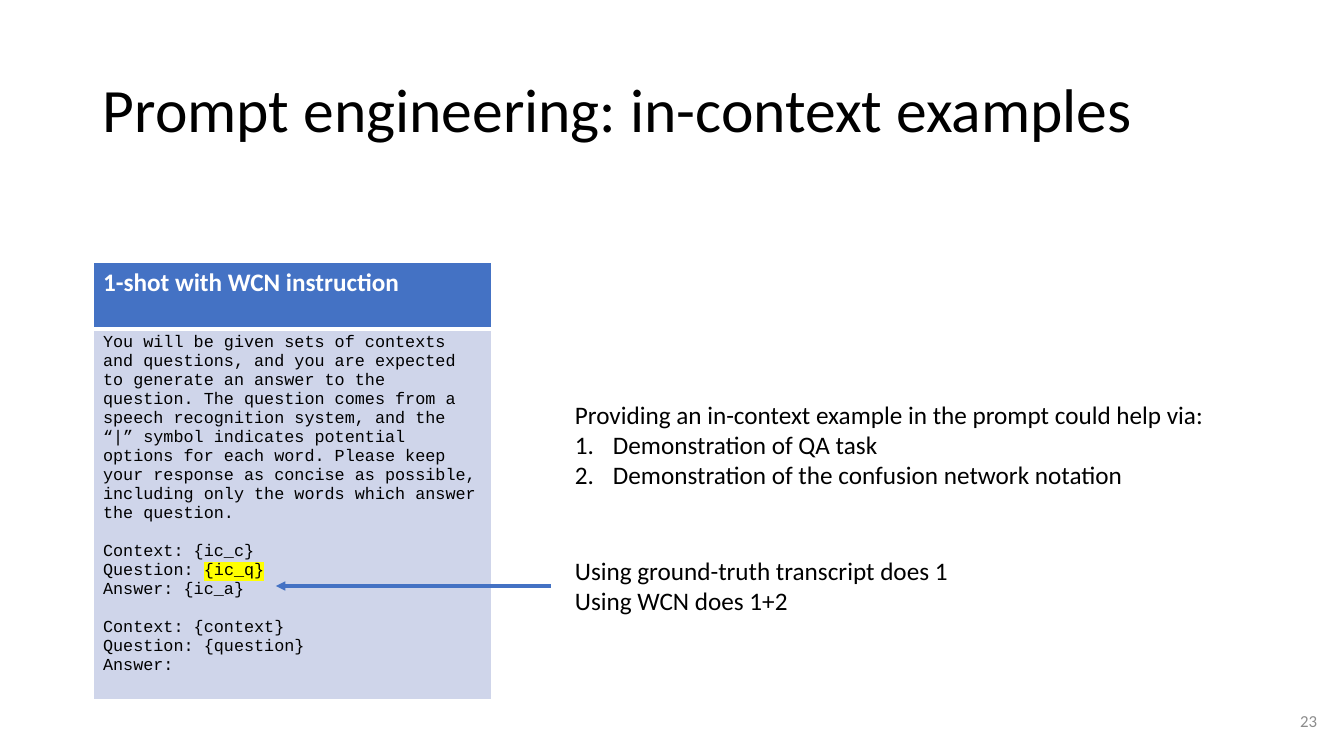
import pptx
import pptx.dml.color
import pptx.enum.shapes
import pptx.enum.text
import pptx.oxml
import pptx.oxml.ns
import pptx.util
import lxml.etree

PX = 914400 / 100.8
THEME = {
    "sans": "Calibri", "mono": "Courier New",
    "black": "000000", "white": "FFFFFF", "grey": "8C8C8C",
    "blue": "4472C4", "pale": "CFD5EA", "yellow": "FFFF00",
    "title": 44, "body": 18, "small": 12,
}
qn = pptx.oxml.ns.qn
ANCHOR = pptx.enum.text.MSO_ANCHOR
rgb = pptx.dml.color.RGBColor.from_string


def px(n):
    return pptx.util.Emu(round(n * PX))


def write(tf, lines, size="body", font="sans", color="black", bold=False, align=None,
          spacing=None, numbered=(), spaced=(), gap=0, mark=None):
    """Fill a text frame, one paragraph per line; numbered and spaced hold line indexes."""
    for i, line in enumerate(lines):
        p = tf.paragraphs[0] if i == 0 else tf.add_paragraph()
        p.alignment, p.line_spacing = align, spacing
        if i in spaced:
            p.space_before = pptx.util.Pt(gap)
        if i in numbered:
            pPr = p._p.get_or_add_pPr()
            pPr.set("marL", str(px(38)))
            pPr.set("indent", str(-px(38)))
            lxml.etree.SubElement(pPr, qn("a:buAutoNum"), type="arabicPeriod")
        parts = line.partition(mark) if mark else (line,)
        for part in filter(None, parts):
            r = p.add_run()
            r.text = part
            r.font.size = pptx.util.Pt(THEME[size])
            r.font.name = THEME[font]
            r.font.bold = bold
            r.font.color.rgb = rgb(THEME[color])
            if part == mark:
                highlight = pptx.oxml.parse_xml(
                    f'<a:highlight {pptx.oxml.ns.nsdecls("a")}>'
                    f'<a:srgbClr val="{THEME["yellow"]}"/></a:highlight>')
                r._r.rPr.find(qn("a:solidFill")).addnext(highlight)


prs = pptx.Presentation()
prs.slide_width, prs.slide_height = px(1344), px(756)
slide = prs.slides.add_slide(prs.slide_layouts[6])

# Title, explanations and slide number
boxes = [
    ((93, 40, 1200, 146), ["Prompt engineering: in-context examples"], True, ANCHOR.MIDDLE,
     {"size": "title", "spacing": 0.9}),
    ((565, 394, 657, 102), ["Providing an in-context example in the prompt could help via:",
                            "Demonstration of QA task",
                            "Demonstration of the confusion network notation"],
     False, ANCHOR.TOP, {"numbered": (1, 2)}),
    ((565, 550, 397, 72), ["Using ground-truth transcript does 1", "Using WCN does 1+2"],
     False, ANCHOR.TOP, {}),
    ((1025, 701, 302, 40), ["23"], True, ANCHOR.MIDDLE,
     {"size": "small", "color": "grey", "align": pptx.enum.text.PP_ALIGN.RIGHT}),
]
for place, lines, wrap, anchor, style in boxes:
    tf = slide.shapes.add_textbox(*map(px, place)).text_frame
    tf.word_wrap, tf.vertical_anchor = wrap, anchor
    write(tf, lines, **style)

# Prompt table
prompt = [
    "You will be given sets of contexts and questions, and you are expected to generate "
    "an answer to the question. The question comes from a speech recognition system, and "
    "the “|” symbol indicates potential options for each word. Please keep your response "
    "as concise as possible, including only the words which answer the question.",
    "Context: {ic_c}", "Question: {ic_q}", "Answer: {ic_a}",
    "Context: {context}", "Question: {question}", "Answer:",
]
rows = [
    (67, "blue", 3, 1, ["1-shot with WCN instruction"], {"color": "white", "bold": True}),
    (352, "pale", 1, 3, prompt, {"size": "small", "font": "mono", "mark": "{ic_q}",
                                 "spaced": (1, 4), "gap": 13.6}),
]
table = slide.shapes.add_table(2, 1, px(93), px(262), px(399), px(419)).table
for i, (height, fill, bottom, top, lines, style) in enumerate(rows):
    table.rows[i].height = px(height)
    cell = table.cell(i, 0)
    tcPr = cell._tc.get_or_add_tcPr()
    for side, width in (("L", 1), ("R", 1), ("T", top), ("B", bottom)):
        ln = lxml.etree.SubElement(tcPr, qn(f"a:ln{side}"), w=str(pptx.util.Pt(width)))
        solid = lxml.etree.SubElement(ln, qn("a:solidFill"))
        lxml.etree.SubElement(solid, qn("a:srgbClr"), val=THEME["white"])
    cell.fill.solid()
    cell.fill.fore_color.rgb = rgb(THEME[fill])
    write(cell.text_frame, lines, **style)

# Arrow to the example question and answer
arrow = slide.shapes.add_connector(
    pptx.enum.shapes.MSO_CONNECTOR.STRAIGHT, px(551), px(586), px(276), px(586))
arrow.line.color.rgb = rgb(THEME["blue"])
arrow.line.width = pptx.util.Pt(2.25)
lxml.etree.SubElement(arrow.line._get_or_add_ln(), qn("a:tailEnd"), type="triangle")
lxml.etree.SubElement(arrow._element.spPr, qn("a:effectLst"))

prs.save("out.pptx")
